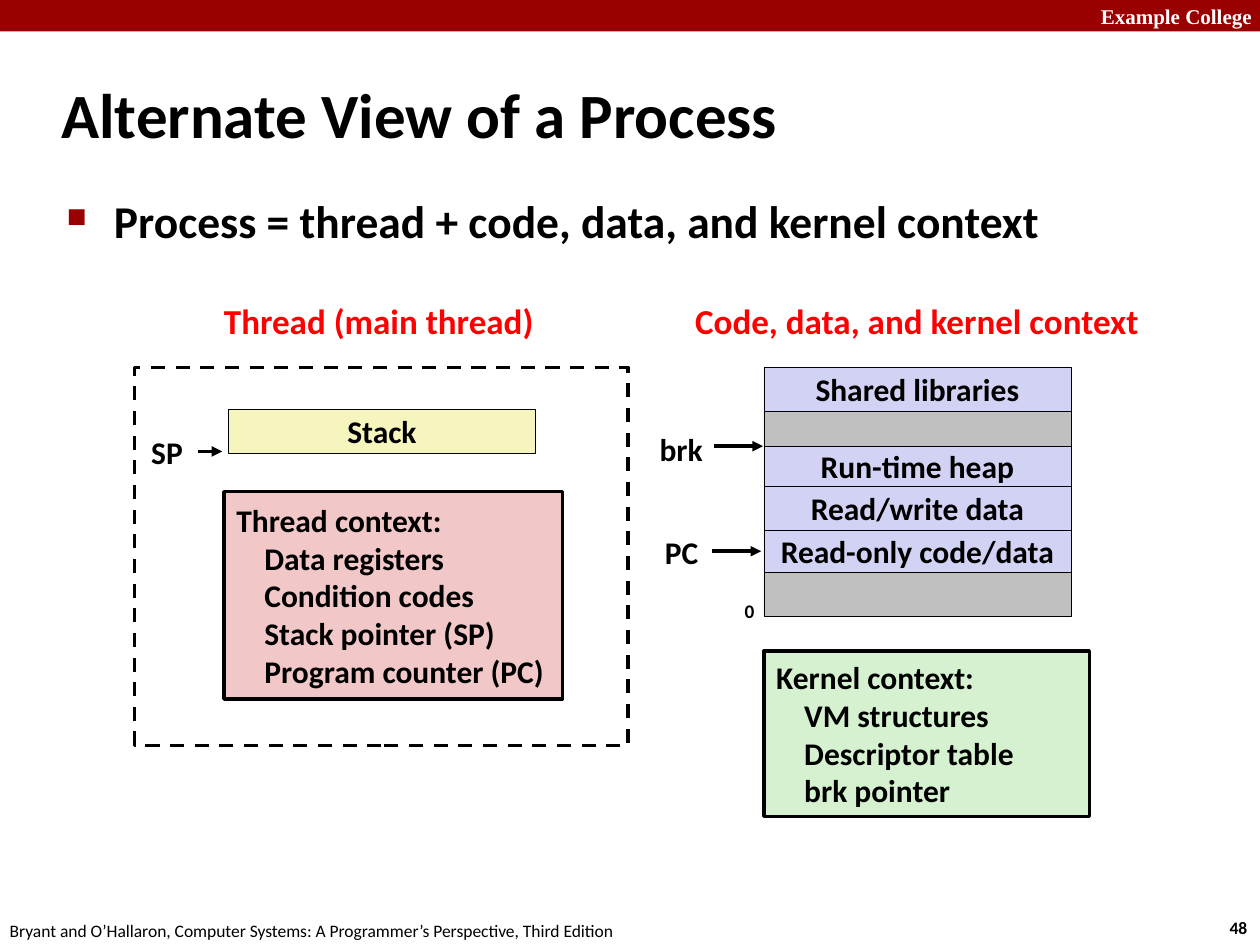
from dataclasses import dataclass

from lxml import etree
from pptx import Presentation
from pptx.dml.color import RGBColor
from pptx.enum import dml, shapes, text
from pptx.oxml import ns
from pptx.util import Pt


@dataclass(frozen=True)
class Theme:
    font: str = "Calibri"
    brand_font: str = "Times New Roman"
    black: str = "000000"
    white: str = "FFFFFF"
    accent: str = "990000"
    heading: str = "FF0000"
    memory: str = "D2D2F4"
    unused: str = "C0C0C0"
    stack: str = "F6F5BD"
    thread: str = "F1C7C7"
    kernel: str = "D5F1CF"
    title_size: int = 36
    body_size: int = 26
    heading_size: int = 20
    text_size: int = 18
    brand_size: int = 12
    small_size: int = 11
    footer_size: int = 10
    thin: float = 0.25
    thick: float = 2


LEFT, CENTER = text.PP_ALIGN.LEFT, text.PP_ALIGN.CENTER
TOP, MIDDLE = text.MSO_ANCHOR.TOP, text.MSO_ANCHOR.MIDDLE


def add_xml(parent, tag, **attributes):
    return etree.SubElement(parent, ns.qn(tag), attributes)


class SlideBuilder:
    def __init__(self, slide, theme):
        self.slide = slide
        self.theme = theme

    def set_text(self, shape, lines, size, color=None, bold=True, font=None,
                 align=LEFT, anchor=MIDDLE, wrap=True):
        """Fill a shape with paragraphs in one style."""
        frame = shape.text_frame
        frame.text = "\n".join(lines)
        frame.word_wrap = wrap
        frame.vertical_anchor = anchor
        for paragraph in frame.paragraphs:
            paragraph.alignment = align
            for run in paragraph.runs:
                run.font.size = Pt(size)
                run.font.bold = bold
                run.font.name = font or self.theme.font
                run.font.color.rgb = RGBColor.from_string(color or self.theme.black)

    def label(self, place, words, size, **style):
        shape = self.slide.shapes.add_textbox(*map(Pt, place))
        self.set_text(shape, [words], size, **style)
        return shape

    def box(self, place, fill=None, line_width=None, dashed=False):
        shape = self.slide.shapes.add_shape(
            shapes.MSO_SHAPE.RECTANGLE, *map(Pt, place))
        shape.shadow.inherit = False
        if fill:
            shape.fill.solid()
            shape.fill.fore_color.rgb = RGBColor.from_string(fill)
        else:
            shape.fill.background()
        if line_width:
            shape.line.width = Pt(line_width)
            shape.line.color.rgb = RGBColor.from_string(self.theme.black)
            if dashed:
                shape.line.dash_style = dml.MSO_LINE.DASH
        else:
            shape.line.fill.background()
        return shape

    def cell(self, place, words, fill):
        """Draw one region of memory."""
        shape = self.box(place, fill, self.theme.thin)
        if words:
            self.set_text(shape, [words], self.theme.text_size, align=CENTER)

    def context(self, place, heading, items, fill):
        """Draw a thick box with a heading and indented items."""
        shape = self.box(place, fill, self.theme.thick)
        self.set_text(shape, [heading, *items], self.theme.text_size)
        for paragraph in shape.text_frame.paragraphs[1:]:
            paragraph._p.get_or_add_pPr().set("marL", str(Pt(16)))

    def bullet(self, place, words):
        shape = self.label(place, words, self.theme.body_size, anchor=TOP)
        paragraph = shape.text_frame.paragraphs[0]
        paragraph.space_before = Pt(5)
        properties = paragraph._p.get_or_add_pPr()
        properties.set("marL", str(Pt(27)))
        properties.set("indent", str(-Pt(27)))
        color = add_xml(properties, "a:buClr")
        add_xml(color, "a:srgbClr", val=self.theme.accent)
        add_xml(properties, "a:buSzPct", val="60000")
        add_xml(properties, "a:buChar", char="■")

    def pointer(self, name, label_place, start, end, y):
        """Draw a named arrow to the right."""
        self.label(label_place, name, self.theme.text_size,
                   align=CENTER, wrap=False)
        arrow = self.slide.shapes.add_connector(
            shapes.MSO_CONNECTOR.STRAIGHT, Pt(start), Pt(y), Pt(end), Pt(y))
        arrow.line.width = Pt(self.theme.thick)
        arrow.line.color.rgb = RGBColor.from_string(self.theme.black)
        add_xml(arrow.line._get_or_add_ln(), "a:tailEnd", type="triangle")
        add_xml(arrow._element.spPr, "a:effectLst")


def main():
    presentation = Presentation()
    presentation.slide_width, presentation.slide_height = Pt(720), Pt(540)
    slide = presentation.slides.add_slide(presentation.slide_layouts[6])
    theme = Theme()
    builder = SlideBuilder(slide, theme)

    builder.box((0, 0, 720, 18), theme.accent)
    builder.label((622, -2, 103, 22), "Example College", theme.brand_size,
                  color=theme.white, font=theme.brand_font, wrap=False)
    builder.label((695.5, 520.5, 26.5, 19.5), "48", theme.footer_size,
                  anchor=TOP, wrap=False)
    builder.label((-1.5, 522, 366, 19.5),
                  "Bryant and O’Hallaron, Computer Systems: "
                  "A Programmer’s Perspective, Third Edition",
                  theme.footer_size, bold=False, anchor=TOP, wrap=False)

    builder.label((28, 34.5, 598, 60), "Alternate View of a Process",
                  theme.title_size)
    builder.bullet((31, 107, 622, 392),
                   "Process = thread + code, data, and kernel context")
    for place, words in (
        ((119.5, 167, 194, 32), "Thread (main thread)"),
        ((386.5, 167, 275, 32), "Code, data, and kernel context"),
    ):
        builder.label(place, words, theme.heading_size, color=theme.heading,
                      align=CENTER, wrap=False)

    diagram_top, memory_left, cell_width = 210, 436.5, 175.5
    builder.box((77, diagram_top, 282, 216), line_width=theme.thick, dashed=True)
    builder.cell((130.5, 234, cell_width, 25), "Stack", theme.stack)
    builder.context((128, 281, 193.5, 118.5), "Thread context:",
                    ["Data registers", "Condition codes",
                     "Stack pointer (SP)", "Program counter (PC)"],
                    theme.thread)

    top = diagram_top
    for words, height in (
        ("Shared libraries", 25),
        ("", 20),
        ("Run-time heap", 23),
        ("Read/write data", 25),
        ("Read-only code/data", 24),
        ("", 25),
    ):
        fill = theme.memory if words else theme.unused
        builder.cell((memory_left, top, cell_width, height), words, fill)
        top += height
    builder.label((418.5, 339, 20, 21), "0", theme.small_size,
                  anchor=TOP, wrap=False)
    builder.context((memory_left, 372, 186, 94.5), "Kernel context:",
                    ["VM structures", "Descriptor table", "brk pointer"],
                    theme.kernel)

    builder.pointer("SP", (79, 243.5, 33, 29), 113, 127, 258)
    builder.pointer("brk", (369.5, 242, 39.5, 29), 408, 436, 255)
    builder.pointer("PC", (372.5, 301, 34, 29), 407, 435, 315)

    presentation.save("out.pptx")


if __name__ == "__main__":
    main()
